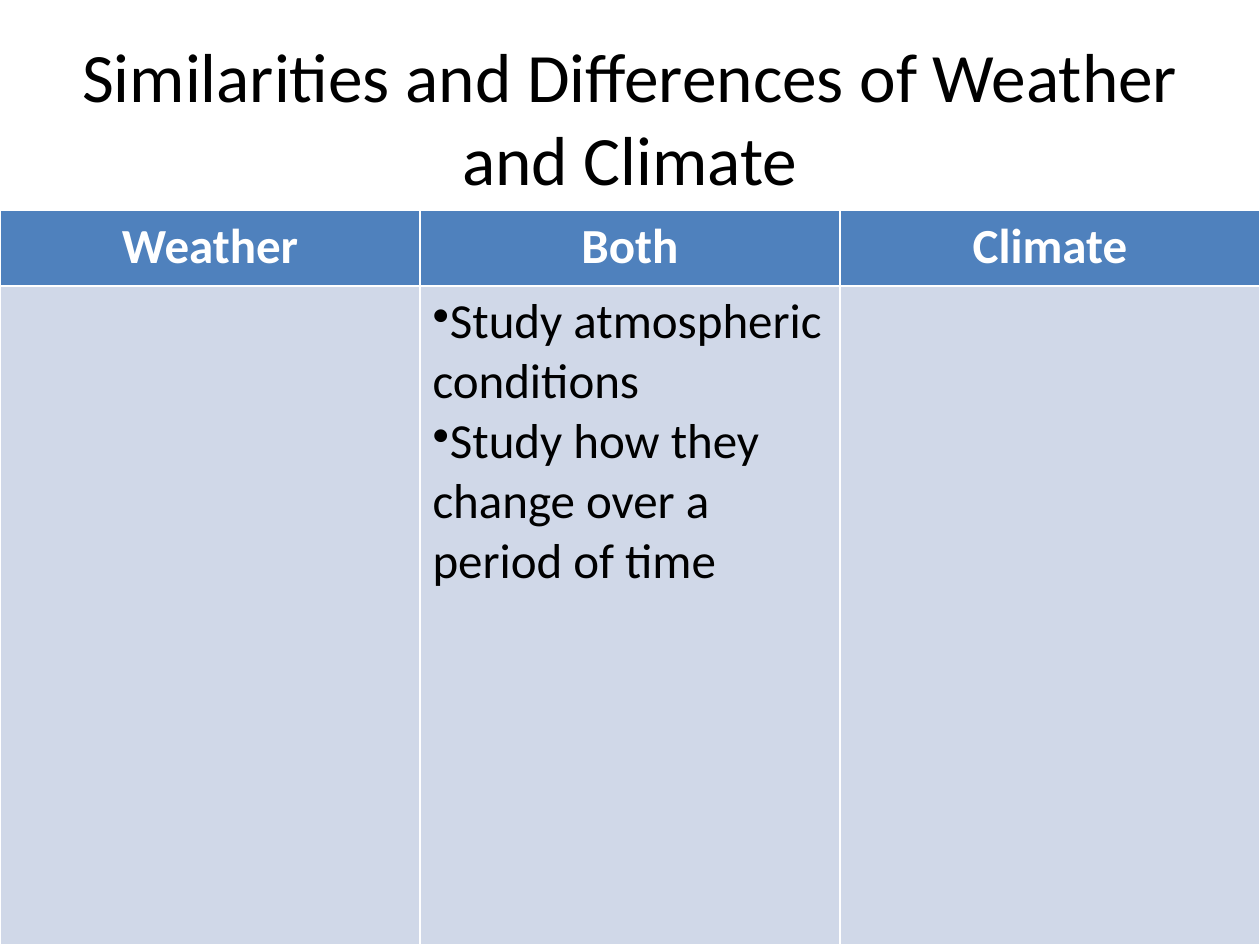
from dataclasses import dataclass

from lxml.etree import SubElement
from pptx import Presentation
from pptx.dml.color import RGBColor
from pptx.enum.text import MSO_ANCHOR as Anchor, MSO_AUTO_SIZE as Fit, PP_ALIGN as Align
from pptx.oxml.ns import qn
from pptx.util import Inches, Pt

FONT = "Calibri"
BLUE, PALE, WHITE, BLACK = "4F81BD", "D0D8E8", "FFFFFF", "000000"


@dataclass
class Topic:
    head: str
    points: tuple[str, ...] = ()


TOPICS = [
    Topic("Weather"),
    Topic("Both", (
        "Study atmospheric conditions",
        "Study how they change over a period of time",
    )),
    Topic("Climate"),
]


def color(code: str) -> RGBColor:
    return RGBColor.from_string(code)


def style(frame, size: float, code: str, bold: bool, align: Align) -> None:
    for para in frame.paragraphs:
        para.alignment = align
        for item in (para, *para.runs):
            item.font.name = FONT
            item.font.size = Pt(size)
            item.font.bold = bold
            item.font.color.rgb = color(code)


def add_bullet(para) -> None:
    props = para._p.get_or_add_pPr()
    props.set("marL", "0")
    props.set("indent", "0")
    mark = SubElement(props, qn("a:buChar"))
    mark.set("char", "•")
    props.insert(0, mark)


def paint(cell, code: str) -> None:
    cell.fill.solid()
    cell.fill.fore_color.rgb = color(code)


def draw_topic(table, col: int, topic: Topic) -> None:
    head, body = table.cell(0, col), table.cell(1, col)
    paint(head, BLUE)
    paint(body, PALE)
    head.text_frame.text = topic.head
    style(head.text_frame, 28, WHITE, True, Align.CENTER)
    body.text_frame.text = "\n".join(topic.points)
    style(body.text_frame, 28, BLACK, False, Align.LEFT)
    if topic.points:
        for para in body.text_frame.paragraphs:
            add_bullet(para)


def draw_title(title, text: str) -> None:
    title.left, title.top = Inches(0.5), Inches(0.3)
    title.width, title.height = Inches(9), Inches(1.25)
    frame = title.text_frame
    frame.text = text
    frame.word_wrap = True
    frame.auto_size = Fit.NONE
    frame.vertical_anchor = Anchor.MIDDLE
    style(frame, 39.6, BLACK, False, Align.CENTER)


def main() -> None:
    deck = Presentation()
    deck.slide_width, deck.slide_height = Inches(10), Inches(7.5)
    slide = deck.slides.add_slide(deck.slide_layouts[5])
    draw_title(slide.shapes.title, "Similarities and Differences of Weather and Climate")

    table = slide.shapes.add_table(
        2, len(TOPICS), Inches(0), Inches(1.67), Inches(10), Inches(5.83)
    ).table
    for row, height in zip(table.rows, (0.6, 5.23)):
        row.height = Inches(height)
    for col, topic in enumerate(TOPICS):
        draw_topic(table, col, topic)
    deck.save("out.pptx")


if __name__ == "__main__":
    main()
